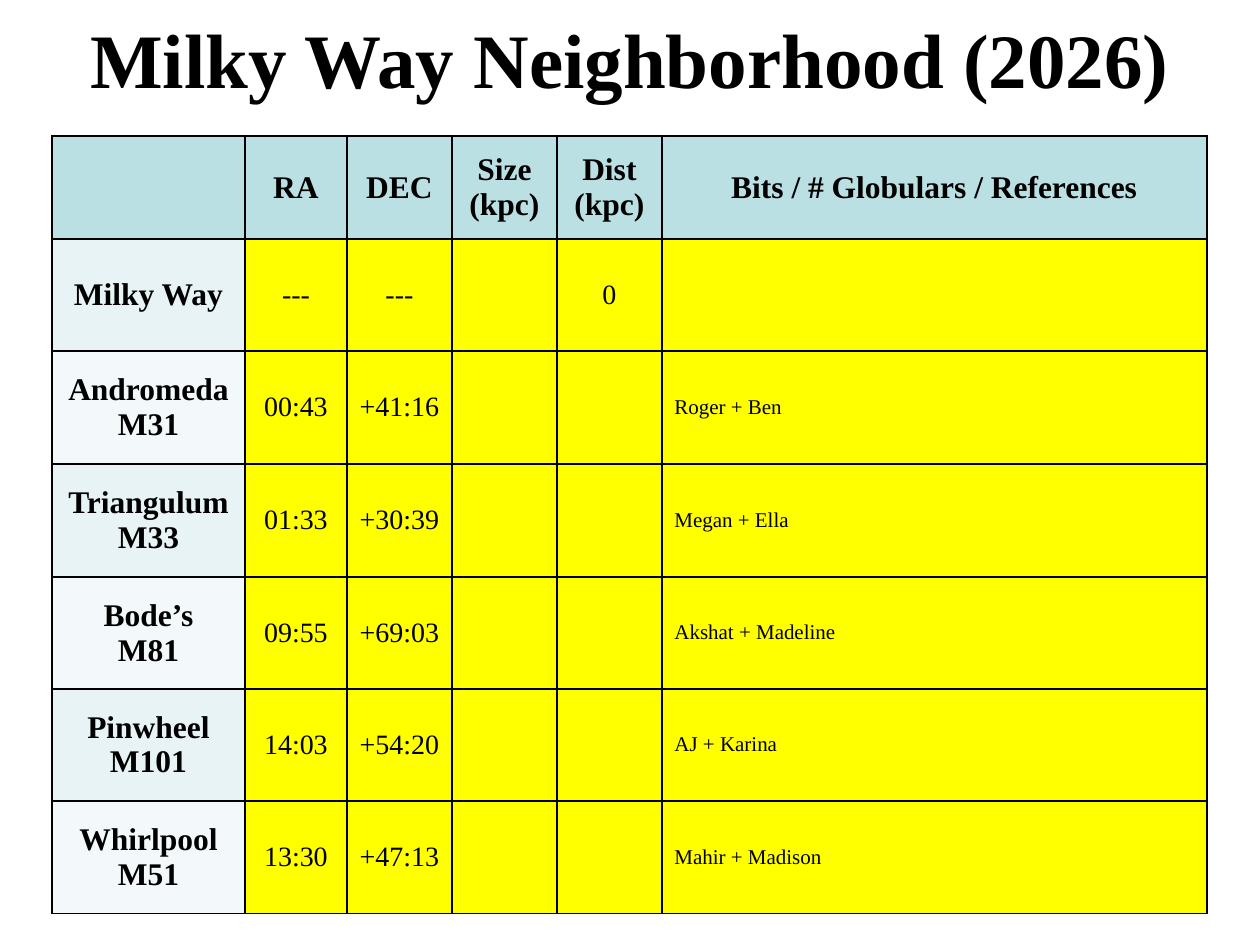
"""Build a slide with a table of galaxies near the Milky Way."""
from dataclasses import dataclass

import lxml.etree
import pptx
import pptx.dml.color
import pptx.enum.text
import pptx.oxml.ns
import pptx.util

EMU_PER_PX = 914400 / 126
FONT = "Times New Roman"
BLACK, YELLOW, HEADER_FILL = "000000", "FFFF00", "BBE0E3"
NAME_FILLS = ("E7F3F4", "F3F9FA")
CENTER = pptx.enum.text.PP_ALIGN.CENTER
LEFT = pptx.enum.text.PP_ALIGN.LEFT
MIDDLE = pptx.enum.text.MSO_ANCHOR.MIDDLE
HEADERS = ("", "RA", "DEC", "Size\n(kpc)", "Dist (kpc)", "Bits / # Globulars / References")
COLUMN_WIDTHS = (193, 102, 105, 105, 105, 545)
ROW_HEIGHTS = (103, 112, 113, 113, 112, 112, 113)


@dataclass
class Galaxy:
    name: str
    right_ascension: str
    declination: str
    size: str = ""
    distance: str = ""
    notes: str = ""


GALAXIES = (
    Galaxy("Milky Way", "---", "---", distance="0"),
    Galaxy("Andromeda\nM31", "00:43", "+41:16", notes="Roger + Ben"),
    Galaxy("Triangulum\nM33", "01:33", "+30:39", notes="Megan + Ella"),
    Galaxy("Bode’s\nM81", "09:55", "+69:03", notes="Akshat + Madeline"),
    Galaxy("Pinwheel\nM101", "14:03", "+54:20", notes="AJ + Karina"),
    Galaxy("Whirlpool\nM51", "13:30", "+47:13", notes="Mahir + Madison"),
)


def px(length: int) -> pptx.util.Emu:
    return pptx.util.Emu(round(length * EMU_PER_PX))


def color(value: str) -> pptx.dml.color.RGBColor:
    return pptx.dml.color.RGBColor.from_string(value)


def write_text(text_frame, text: str, *, size: int, bold: bool = False, align=CENTER) -> None:
    text_frame.text = text
    for paragraph in text_frame.paragraphs:
        paragraph.alignment = align
        for run in paragraph.runs:
            run.font.name = FONT
            run.font.size = pptx.util.Pt(size)
            run.font.bold = bold
            run.font.color.rgb = color(BLACK)


def add_borders(cell) -> None:
    qualified = pptx.oxml.ns.qn
    properties = cell._tc.get_or_add_tcPr()
    for side in ("lnL", "lnR", "lnT", "lnB"):
        line = lxml.etree.SubElement(properties, qualified(f"a:{side}"), w=str(pptx.util.Pt(1)))
        fill = lxml.etree.SubElement(line, qualified("a:solidFill"))
        lxml.etree.SubElement(fill, qualified("a:srgbClr"), val=BLACK)


def fill_cell(cell, text: str, fill: str, **text_format) -> None:
    add_borders(cell)
    cell.fill.solid()
    cell.fill.fore_color.rgb = color(fill)
    cell.vertical_anchor = MIDDLE
    if text:
        write_text(cell.text_frame, text, **text_format)


def add_title(slide, text: str) -> None:
    title = slide.shapes.title
    title.left, title.top, title.width, title.height = px(0), px(0), px(1260), px(116)
    title.text_frame.auto_size = pptx.enum.text.MSO_AUTO_SIZE.NONE
    title.text_frame.vertical_anchor = MIDDLE
    write_text(title.text_frame, text, size=44, bold=True)


def add_galaxy_table(slide, galaxies: tuple[Galaxy, ...]) -> None:
    frame = slide.shapes.add_table(
        len(galaxies) + 1, len(HEADERS), px(52), px(136), px(sum(COLUMN_WIDTHS)), px(sum(ROW_HEIGHTS))
    )
    table = frame.table
    table.first_row = table.horz_banding = False
    for column, width in zip(table.columns, COLUMN_WIDTHS):
        column.width = px(width)
    for row, height in zip(table.rows, ROW_HEIGHTS):
        row.height = px(height)
    for index, header in enumerate(HEADERS):
        fill_cell(table.cell(0, index), header, HEADER_FILL, size=18, bold=True)
    for index, galaxy in enumerate(galaxies):
        name, *measures, notes = table.rows[index + 1].cells
        fill_cell(name, galaxy.name, NAME_FILLS[index % 2], size=18, bold=True)
        values = (galaxy.right_ascension, galaxy.declination, galaxy.size, galaxy.distance)
        for cell, value in zip(measures, values):
            fill_cell(cell, value, YELLOW, size=16)
        fill_cell(notes, galaxy.notes, YELLOW, size=12, align=LEFT)


def main() -> None:
    presentation = pptx.Presentation()
    presentation.slide_width, presentation.slide_height = px(1260), px(945)
    slide = presentation.slides.add_slide(presentation.slide_layouts[5])
    add_title(slide, "Milky Way Neighborhood (2026)")
    add_galaxy_table(slide, GALAXIES)
    presentation.save("out.pptx")


if __name__ == "__main__":
    main()
